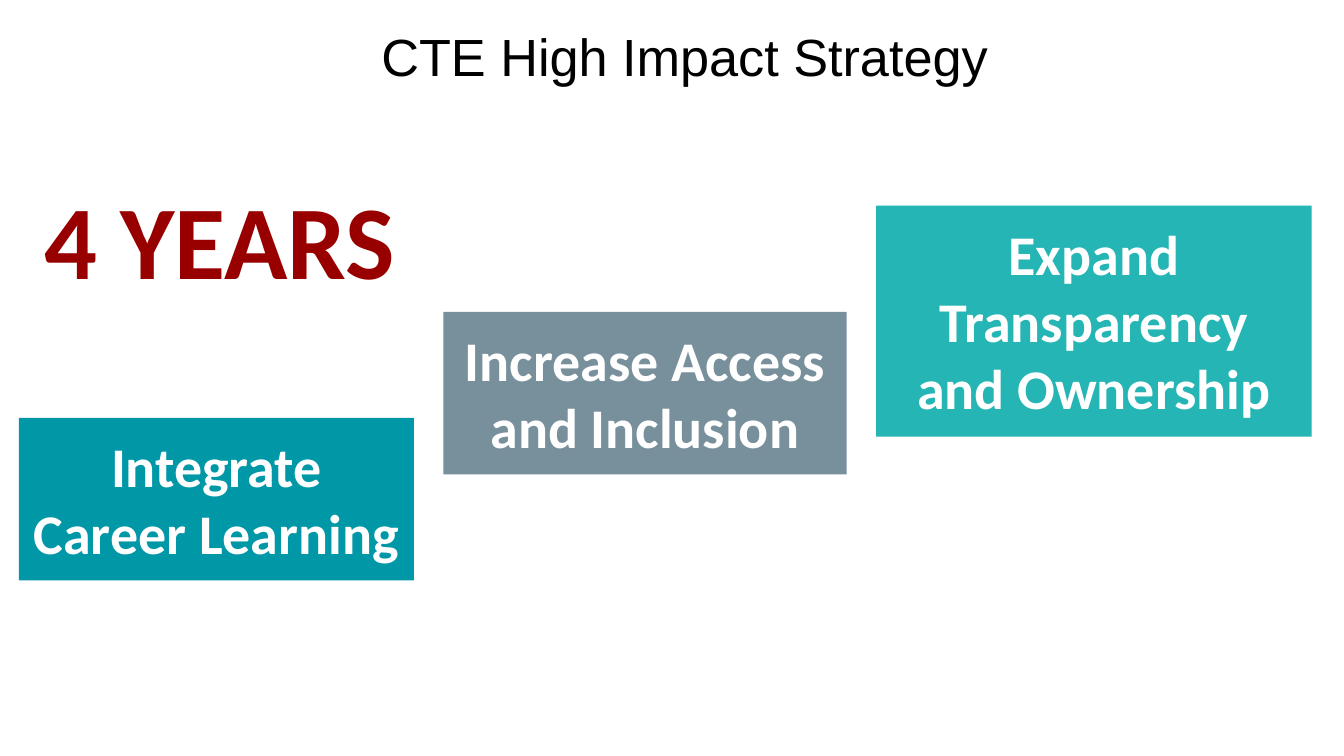
from pptx import Presentation
from pptx.dml.color import RGBColor as RGB
from pptx.enum.shapes import MSO_SHAPE as Shape
from pptx.enum.text import MSO_ANCHOR as Anchor, PP_ALIGN as Align
from pptx.util import Inches, Pt

# Content
TITLE = "CTE High Impact Strategy"
DURATION = "4 YEARS"
STRATEGIES = [  # wording, fill, width, height
    ("Integrate Career Learning", "0097A7", 2.94, 1.21),
    ("Increase Access and Inclusion", "78909C", 3.00, 1.21),
    ("Expand Transparency and Ownership", "26B5B5", 3.24, 1.72),
]

THEME = {  # font, size, colour, bold
    "title": ("Arial", 28, "000000", False),
    "duration": ("Calibri", 56, "980000", True),
    "strategy": ("Calibri", 30, "FFFFFF", True),
}

# Widescreen slide, 16:9
SLIDE_WIDTH = 10
SLIDE_HEIGHT = SLIDE_WIDTH * 9 / 16

# Staircase: each step starts one gap to the right and one rise higher
FIRST_LEFT, FIRST_TOP, GAP, RISE = 0.14, 3.11, 0.22, 0.79


def write(shape, wording, style, align=Align.LEFT, anchor=Anchor.TOP,
          margin_y=0.1, line_spacing=1.0):
    frame = shape.text_frame
    frame.word_wrap = True
    frame.vertical_anchor = anchor
    frame.margin_left = frame.margin_right = Inches(0.1)
    frame.margin_top = frame.margin_bottom = Inches(margin_y)
    paragraph = frame.paragraphs[0]
    paragraph.alignment = align
    paragraph.line_spacing = line_spacing
    run = paragraph.add_run()
    run.text = wording
    font = run.font
    font.name, size, colour, font.bold = THEME[style]
    font.size = Pt(size)
    font.color.rgb = RGB.from_string(colour)


def main():
    prs = Presentation()
    prs.slide_width, prs.slide_height = Inches(SLIDE_WIDTH), Inches(SLIDE_HEIGHT)
    shapes = prs.slides.add_slide(prs.slide_layouts[6]).shapes

    # Title
    title = shapes.add_textbox(Inches(2.74), Inches(-0.1), Inches(7.26), Inches(1.09))
    write(title, TITLE, "title", anchor=Anchor.MIDDLE, margin_y=0.05, line_spacing=0.9)

    # Duration
    duration = shapes.add_textbox(Inches(0.23), Inches(1.2), Inches(4.21), Inches(1.14))
    write(duration, DURATION, "duration")

    # Rising strategy steps
    left, top = FIRST_LEFT, FIRST_TOP
    for wording, fill, width, height in STRATEGIES:
        step = shapes.add_shape(Shape.RECTANGLE, Inches(left), Inches(top),
                                Inches(width), Inches(height))
        step.shadow.inherit = False
        step.fill.solid()
        step.fill.fore_color.rgb = RGB.from_string(fill)
        step.line.fill.background()
        write(step, wording, "strategy", align=Align.CENTER)
        left += width + GAP
        top -= RISE

    prs.save("out.pptx")


if __name__ == "__main__":
    main()
